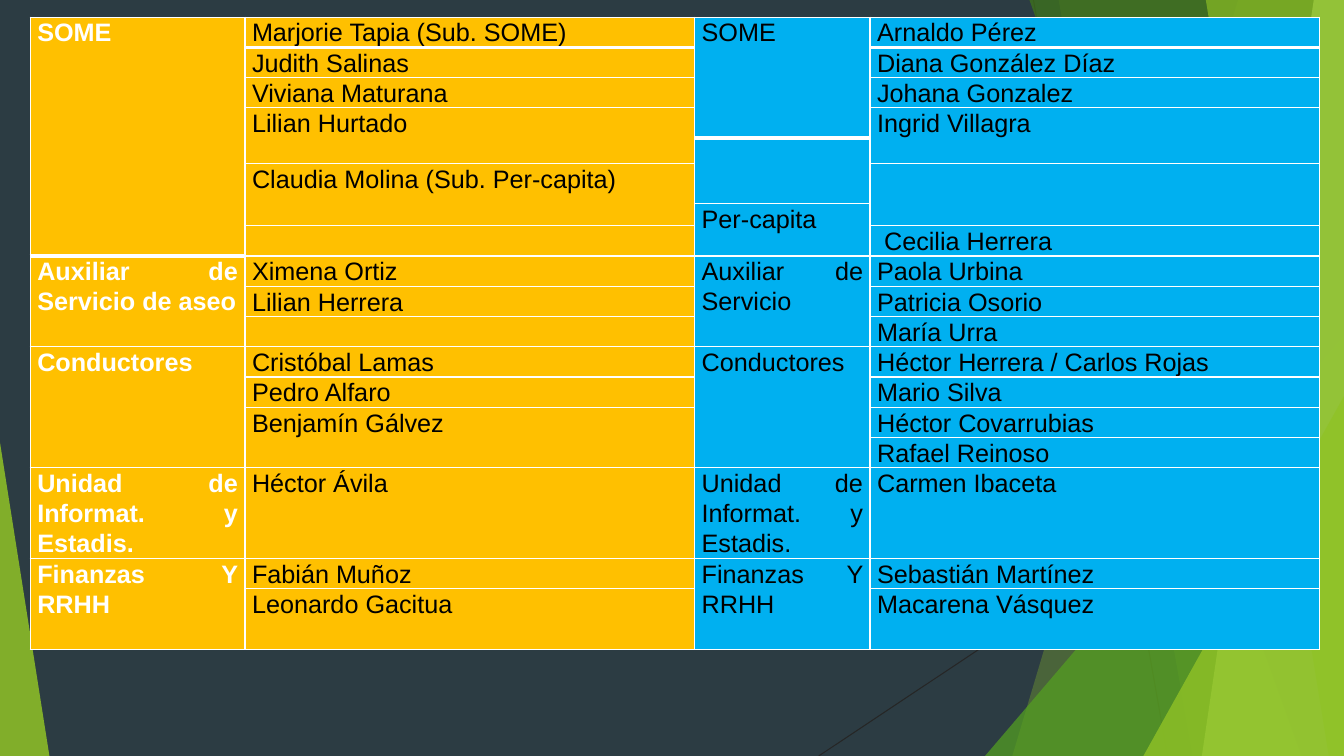
"""Build the staff roster slide: faceted green backdrop and a two-sided team table."""
from typing import NamedTuple

from lxml import etree
from pptx import Presentation
from pptx.dml.color import RGBColor
from pptx.enum.shapes import MSO_CONNECTOR, MSO_SHAPE
from pptx.enum.text import PP_ALIGN
from pptx.oxml.ns import qn
from pptx.util import Inches, Pt

TRIANGLE = MSO_SHAPE.ISOSCELES_TRIANGLE
STRAIGHT = MSO_CONNECTOR.STRAIGHT
JUSTIFY = PP_ALIGN.JUSTIFY

SLATE = RGBColor(0x2C, 0x3C, 0x43)
CHARCOAL = RGBColor(0x26, 0x26, 0x26)
GREEN = RGBColor(0x90, 0xC2, 0x26)
MID_GREEN = RGBColor(0x54, 0xA0, 0x21)
DARK_GREEN = RGBColor(0x3F, 0x78, 0x19)
PALE_GREEN = RGBColor(0xC0, 0xE4, 0x74)
AMBER = RGBColor(0xFF, 0xC0, 0x00)
BLUE = RGBColor(0x00, 0xB0, 0xF0)
WHITE = RGBColor(0xFF, 0xFF, 0xFF)
BLACK = RGBColor(0x00, 0x00, 0x00)

WIDTH, HEIGHT = 13.33, 7.5
THIN, THICK = 1, 3


class Ray(NamedTuple):
    x1: float
    y1: float
    x2: float
    y2: float


class Facet(NamedTuple):
    top_x: float
    bottom_x: float
    color: RGBColor
    opacity: int


class Wedge(NamedTuple):
    left: float
    top: float
    width: float
    apex: float
    color: RGBColor
    opacity: int


class Entry(NamedTuple):
    text: str
    rows: int = 1


class Column(NamedTuple):
    width: float
    fill: RGBColor
    color: RGBColor
    bold: bool
    entries: list[Entry]


RAYS = [Ray(10.25, 0, 11.58, HEIGHT), Ray(WIDTH, 4.03, 8.12, HEIGHT)]

BACKDROP = [
    Facet(12.28, 10.04, GREEN, 30),
    Facet(10.5, 11.83, GREEN, 20),
    Wedge(9.77, 3.33, 3.56, 1, MID_GREEN, 72),
    Facet(10.21, 12.91, DARK_GREEN, 70),
    Facet(13.03, 11.92, PALE_GREEN, 70),
    Facet(11.96, 13.18, GREEN, 65),
    Wedge(11.34, 3.93, 1.99, 1, GREEN, 80),
    Wedge(0, 4.39, 0.49, 0, GREEN, 85),
]

ROW_HEIGHTS = [0.3] * 4 + [0.25, 0.4, 0.22] + [0.3] * 8 + [0.9, 0.3, 0.6]

COLUMNS = [
    Column(2.13, AMBER, WHITE, True, [
        Entry("SOME", 8), Entry("Auxiliar de Servicio de aseo", 3),
        Entry("Conductores", 4), Entry("Unidad de Informat. y Estadis."),
        Entry("Finanzas Y RRHH", 2)]),
    Column(4.46, AMBER, BLACK, False, [
        Entry("Marjorie Tapia (Sub. SOME)"), Entry("Judith Salinas"),
        Entry("Viviana Maturana"), Entry("Lilian Hurtado", 2),
        Entry("Claudia Molina (Sub. Per-capita)", 2), Entry(""),
        Entry("Ximena Ortiz"), Entry("Lilian Herrera"), Entry(""),
        Entry("Cristóbal Lamas"), Entry("Pedro Alfaro"),
        Entry("Benjamín Gálvez", 2), Entry("Héctor Ávila"),
        Entry("Fabián Muñoz"), Entry("Leonardo Gacitua")]),
    Column(1.74, BLUE, BLACK, False, [
        Entry("SOME", 4), Entry("", 2), Entry("Per-capita", 2),
        Entry("Auxiliar de Servicio", 3), Entry("Conductores", 4),
        Entry("Unidad de Informat. y Estadis."), Entry("Finanzas Y RRHH", 2)]),
    Column(4.46, BLUE, BLACK, False, [
        Entry("Arnaldo Pérez"), Entry("Diana González Díaz"),
        Entry("Johana Gonzalez"), Entry("Ingrid Villagra", 2), Entry("", 2),
        Entry(" Cecilia Herrera"), Entry("Paola Urbina"),
        Entry("Patricia Osorio"), Entry("María Urra"),
        Entry("Héctor Herrera / Carlos Rojas"), Entry("Mario Silva"),
        Entry("Héctor Covarrubias"), Entry("Rafael Reinoso"),
        Entry("Carmen Ibaceta"), Entry("Sebastián Martínez"),
        Entry("Macarena Vásquez")]),
]


def draw_ray(s, ray: Ray) -> None:
    """Draw one thin backdrop line."""
    line = s.shapes.add_connector(STRAIGHT, *(Inches(v) for v in ray))
    line.line.color.rgb = CHARCOAL
    line.line.width = Pt(0.75)
    etree.SubElement(line._element.spPr, qn("a:effectLst"))


def paint(sp, color: RGBColor, opacity: int) -> None:
    """Give a shape a translucent fill with no outline or shadow."""
    sp.shadow.inherit = False
    sp.line.fill.background()
    sp.fill.solid()
    sp.fill.fore_color.rgb = color
    rgb = sp._element.spPr.find(qn("a:solidFill")).find(qn("a:srgbClr"))
    etree.SubElement(rgb, qn("a:alpha"), val=str(opacity * 1000))


def draw_facet(s, facet: Facet) -> None:
    """Draw a slanted panel that reaches the right edge of the slide."""
    corners = [(WIDTH, 0), (WIDTH, HEIGHT), (facet.bottom_x, HEIGHT)]
    builder = s.shapes.build_freeform(Inches(facet.top_x), 0)
    builder.add_line_segments([(Inches(x), Inches(y)) for x, y in corners])
    paint(builder.convert_to_shape(), facet.color, facet.opacity)


def draw_wedge(s, wedge: Wedge) -> None:
    """Draw a right triangle standing on the bottom edge of the slide."""
    sp = s.shapes.add_shape(TRIANGLE, Inches(wedge.left), Inches(wedge.top),
                            Inches(wedge.width), Inches(HEIGHT - wedge.top))
    sp.adjustments[0] = wedge.apex
    paint(sp, wedge.color, wedge.opacity)


def set_borders(cell, top: int, bottom: int) -> None:
    """Add white borders to a cell, with widths in points."""
    tc_pr = cell._tc.get_or_add_tcPr()
    for side, width in (("L", THIN), ("R", THIN), ("T", top), ("B", bottom)):
        ln = etree.SubElement(tc_pr, qn(f"a:ln{side}"), w=str(Pt(width)))
        fill = etree.SubElement(ln, qn("a:solidFill"))
        etree.SubElement(fill, qn("a:srgbClr"), val=str(WHITE))


def fill_column(table, index: int, column: Column) -> None:
    """Merge, style and fill the cells of one column."""
    row = 0
    header_rows = column.entries[0].rows
    for entry in column.entries:
        cell = table.cell(row, index)
        if entry.rows > 1:
            cell.merge(table.cell(row + entry.rows - 1, index))
        set_borders(cell, THICK if row == header_rows else THIN,
                    THICK if row == 0 else THIN)
        cell.fill.solid()
        cell.fill.fore_color.rgb = column.fill
        cell.margin_left = cell.margin_right = Inches(0.07)
        cell.margin_top = cell.margin_bottom = 0
        p = cell.text_frame.paragraphs[0]
        p.text = entry.text
        p.alignment = JUSTIFY
        p.line_spacing = 1.07
        p.font.name = "Arial"
        p.font.size = Pt(18)
        p.font.bold = column.bold
        p.font.color.rgb = column.color
        row += entry.rows


def draw_table(s) -> None:
    """Draw the staff table."""
    table = s.shapes.add_table(
        len(ROW_HEIGHTS), len(COLUMNS), Inches(0.3), Inches(0.17),
        Inches(sum(c.width for c in COLUMNS)), Inches(sum(ROW_HEIGHTS))).table
    table.first_row = table.horz_banding = False
    for row, height in zip(table.rows, ROW_HEIGHTS):
        row.height = Inches(height)
    for index, column in enumerate(COLUMNS):
        table.columns[index].width = Inches(column.width)
        fill_column(table, index, column)


def main() -> None:
    """Build and save the slide."""
    prs = Presentation()
    prs.slide_width, prs.slide_height = Inches(WIDTH), Inches(HEIGHT)
    s = prs.slides.add_slide(prs.slide_layouts[6])
    s.background.fill.solid()
    s.background.fill.fore_color.rgb = SLATE
    for ray in RAYS:
        draw_ray(s, ray)
    for panel in BACKDROP:
        if isinstance(panel, Facet):
            draw_facet(s, panel)
        else:
            draw_wedge(s, panel)
    draw_table(s)
    prs.save("out.pptx")


if __name__ == "__main__":
    main()
